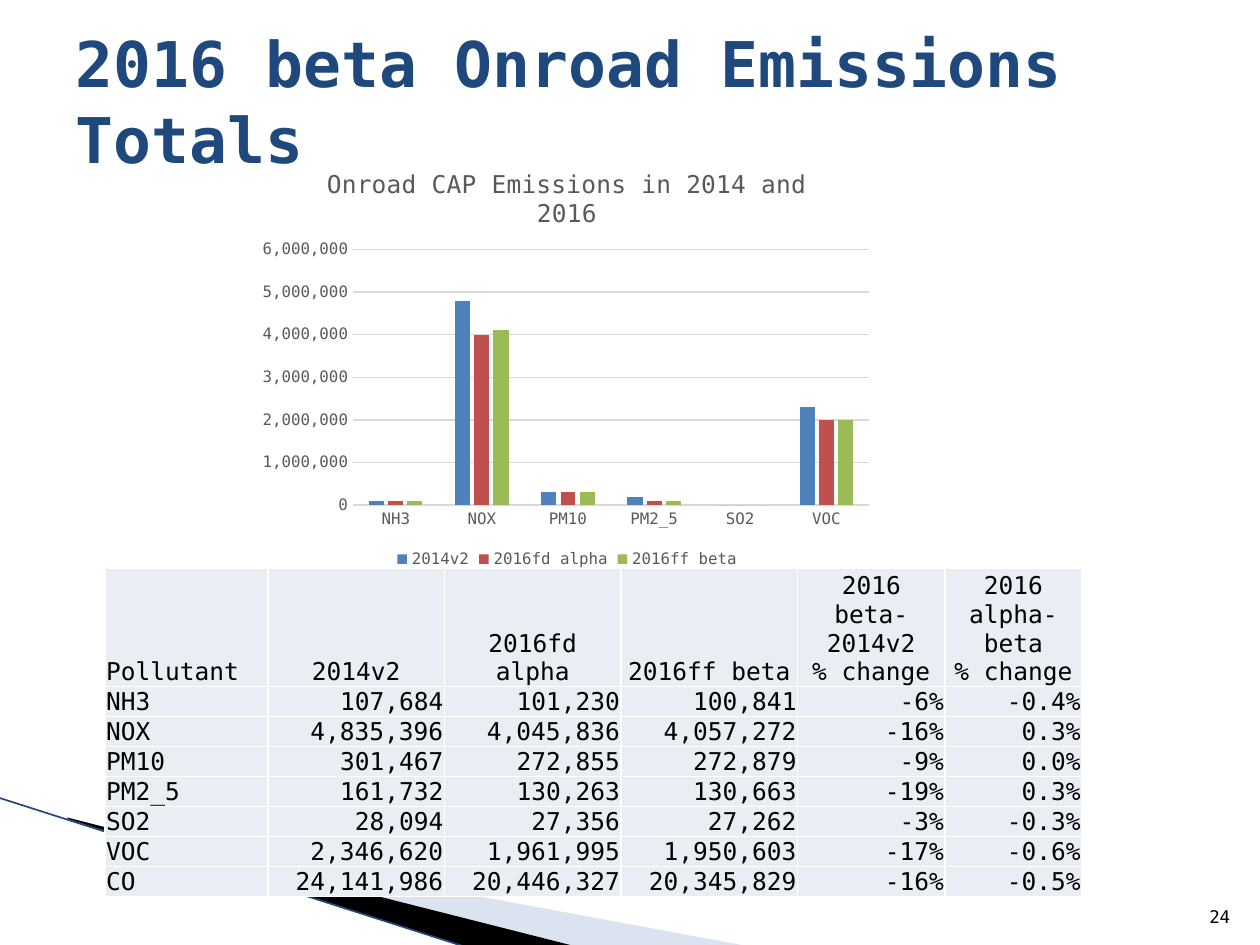
from lxml.etree import SubElement
from pptx import Presentation
from pptx.chart.data import CategoryChartData
from pptx.dml.color import RGBColor
from pptx.enum.chart import XL_CHART_TYPE, XL_LEGEND_POSITION, XL_TICK_MARK
from pptx.enum.shapes import MSO_CONNECTOR
from pptx.enum.text import MSO_ANCHOR, MSO_AUTO_SIZE, PP_ALIGN
from pptx.oxml import parse_xml
from pptx.oxml.ns import nsdecls, qn
from pptx.util import Cm, Pt

FONT = "DejaVu Sans Mono"
COLORS = {
    "title": "1F497D", "text": "000000", "label": "595959", "grid": "D9D9D9",
    "cell": "E9EDF4", "border": "FFFFFF", "wedge": "A7B9DB", "band": "000000",
    "edge": "1F497D",
}
BARS = ["4F81BD", "C0504D", "9BBB59"]
NAMES = ["2014v2", "2016fd alpha", "2016ff beta"]
HEAD = ["Pollutant", *NAMES, "2016 beta- 2014v2\v% change",
        "2016 alpha-beta\v% change"]
ROWS = [
    ("NH3", 107684, 101230, 100841, "-6%", "-0.4%"),
    ("NOX", 4835396, 4045836, 4057272, "-16%", "0.3%"),
    ("PM10", 301467, 272855, 272879, "-9%", "0.0%"),
    ("PM2_5", 161732, 130263, 130663, "-19%", "0.3%"),
    ("SO2", 28094, 27356, 27262, "-3%", "-0.3%"),
    ("VOC", 2346620, 1961995, 1950603, "-17%", "-0.6%"),
    ("CO", 24141986, 20446327, 20345829, "-16%", "-0.5%"),
]
WIDTHS = [3.28, 3.56, 3.56, 3.56, 2.97, 2.76]


def rgb(name):
    return RGBColor.from_string(COLORS[name])


def style(font, size, color, bold=False):
    font.name, font.size, font.bold = FONT, Pt(size), bold
    font.color.rgb = rgb(color)


def write(frame, text, size, color, align, bold=False):
    frame.text = text
    para = frame.paragraphs[0]
    para.alignment = align
    style(para.font, size, color, bold)


def add_wedge(slide, points, color, alpha=None):
    spots = [(Cm(x), Cm(y)) for x, y in points]
    pen = slide.shapes.build_freeform(*spots[0])
    pen.add_line_segments(spots[1:], close=True)
    shape = pen.convert_to_shape()
    shape.shadow.inherit = False
    shape.line.fill.background()
    shape.fill.solid()
    shape.fill.fore_color.rgb = rgb(color)
    if alpha:
        tint = shape.fill._xPr.find(qn("a:solidFill"))[0]
        SubElement(tint, qn("a:alpha"), val=str(alpha * 1000))


def add_edge(slide, x1, y1, x2, y2):
    line = slide.shapes.add_connector(
        MSO_CONNECTOR.STRAIGHT, Cm(x1), Cm(y1), Cm(x2), Cm(y2))
    line.line.color.rgb = rgb("edge")
    line.line.width = Pt(0.95)
    SubElement(line._element.spPr, qn("a:effectLst"))


def add_title(slide, text):
    title = slide.shapes.title
    title.left, title.top = Cm(1.27), Cm(0.43)
    title.width, title.height = Cm(22.86), Cm(3.18)
    frame = title.text_frame
    frame.auto_size = MSO_AUTO_SIZE.NONE
    frame.vertical_anchor = MSO_ANCHOR.MIDDLE
    write(frame, text, 36, "title", PP_ALIGN.LEFT, True)


def add_number(slide, text):
    box = slide.shapes.add_textbox(Cm(24.03), Cm(17.8), Cm(1.02), Cm(1.02))
    frame = box.text_frame
    frame.word_wrap = True
    frame.vertical_anchor = MSO_ANCHOR.BOTTOM
    write(frame, text, 10, "text", PP_ALIGN.RIGHT)


def place_plot(chart, **parts):
    area = chart._chartSpace.chart.plotArea
    for old in area.findall(qn("c:layout")):
        area.remove(old)
    tags = "".join(f'<c:{key} val="{val}"/>' for key, val in parts.items())
    area.insert(0, parse_xml(
        f'<c:layout {nsdecls("c")}><c:manualLayout>'
        '<c:layoutTarget val="inner"/><c:xMode val="edge"/>'
        f'<c:yMode val="edge"/>{tags}</c:manualLayout></c:layout>'))


def add_bars(slide):
    # CO is left out: it would dwarf the other pollutants
    rows = ROWS[:-1]
    data = CategoryChartData(number_format="#,##0")
    data.categories = [row[0] for row in rows]
    for col, name in enumerate(NAMES, 1):
        data.add_series(name, [round(row[col], -5) for row in rows])
    chart = slide.shapes.add_chart(
        XL_CHART_TYPE.COLUMN_CLUSTERED, Cm(5.08), Cm(2.97), Cm(12.7),
        Cm(8.59), data).chart
    style(chart.font, 10, "text")
    write(chart.chart_title.text_frame,
          "Onroad CAP Emissions in 2014 and 2016", 14, "label",
          PP_ALIGN.CENTER)
    place_plot(chart, x=0.16, y=0.24, w=0.82, h=0.6)

    # Bars
    plot = chart.plots[0]
    plot.gap_width, plot.overlap = 219, -27
    plot.vary_by_categories = False
    for bar, color in zip(plot.series, BARS):
        bar.format.fill.solid()
        bar.format.fill.fore_color.rgb = RGBColor.from_string(color)

    # Axes
    cat, val = chart.category_axis, chart.value_axis
    for axis in (cat, val):
        axis.major_tick_mark = axis.minor_tick_mark = XL_TICK_MARK.NONE
        style(axis.tick_labels.font, 9, "label")
    val.minimum_scale, val.maximum_scale = 0, 6000000
    val.major_unit = 1000000
    val.tick_labels.number_format = "#,##0"
    val.tick_labels.number_format_is_linked = False
    val.format.line.fill.background()
    for line in (cat.format.line, val.major_gridlines.format.line):
        line.color.rgb = rgb("grid")
        line.width = Pt(0.75)

    # Legend
    chart.has_legend = True
    chart.legend.position = XL_LEGEND_POSITION.BOTTOM
    chart.legend.include_in_layout = False
    style(chart.legend.font, 9, "label")


def fill_cell(cell, text, align):
    cell.margin_left = cell.margin_right = Cm(0.02)
    cell.margin_top = Cm(0.01)
    cell.margin_bottom = 0
    cell.vertical_anchor = MSO_ANCHOR.BOTTOM
    write(cell.text_frame, text, 14, "text", align)
    props = cell._tc.get_or_add_tcPr()
    for side in "LRTB":
        line = SubElement(props, qn(f"a:ln{side}"), w=str(Pt(1)))
        fill = SubElement(line, qn("a:solidFill"))
        SubElement(fill, qn("a:srgbClr"), val=COLORS["border"])
    cell.fill.solid()
    cell.fill.fore_color.rgb = rgb("cell")


def add_grid(slide):
    lines = [HEAD, *ROWS]
    table = slide.shapes.add_table(
        len(lines), len(HEAD), Cm(2.12), Cm(11.46), Cm(sum(WIDTHS)),
        Cm(6.1)).table
    table.first_row = table.horz_banding = False
    for col, width in zip(table.columns, WIDTHS):
        col.width = Cm(width)
    for r, line in enumerate(lines):
        # Rows grow to fit their text
        table.rows[r].height = Cm(0.49 if r else 2.3)
        for c, item in enumerate(line):
            text = f"{item:,}" if isinstance(item, int) else item
            align = PP_ALIGN.RIGHT if r else PP_ALIGN.CENTER
            fill_cell(table.cell(r, c), text, align if c else PP_ALIGN.LEFT)


def main():
    deck = Presentation()
    deck.slide_width, deck.slide_height = Cm(25.4), Cm(19.05)
    slide = deck.slides.add_slide(deck.slide_layouts[5])

    # Corner decoration
    add_wedge(slide, [(1.4, 16.54), (15.11, 19.08), (11.58, 19.08),
                      (1.4, 16.51)], "wedge", 40)
    add_wedge(slide, [(1.35, 16.48), (11.61, 19.08), (9.45, 19.1),
                      (1.37, 16.51)], "band")
    add_edge(slide, -0.03, 16.08, 9.42, 19.1)

    # Content
    add_number(slide, "24")
    add_title(slide, "2016 beta Onroad Emissions Totals")
    add_bars(slide)
    add_grid(slide)
    deck.save("out.pptx")


if __name__ == "__main__":
    main()
